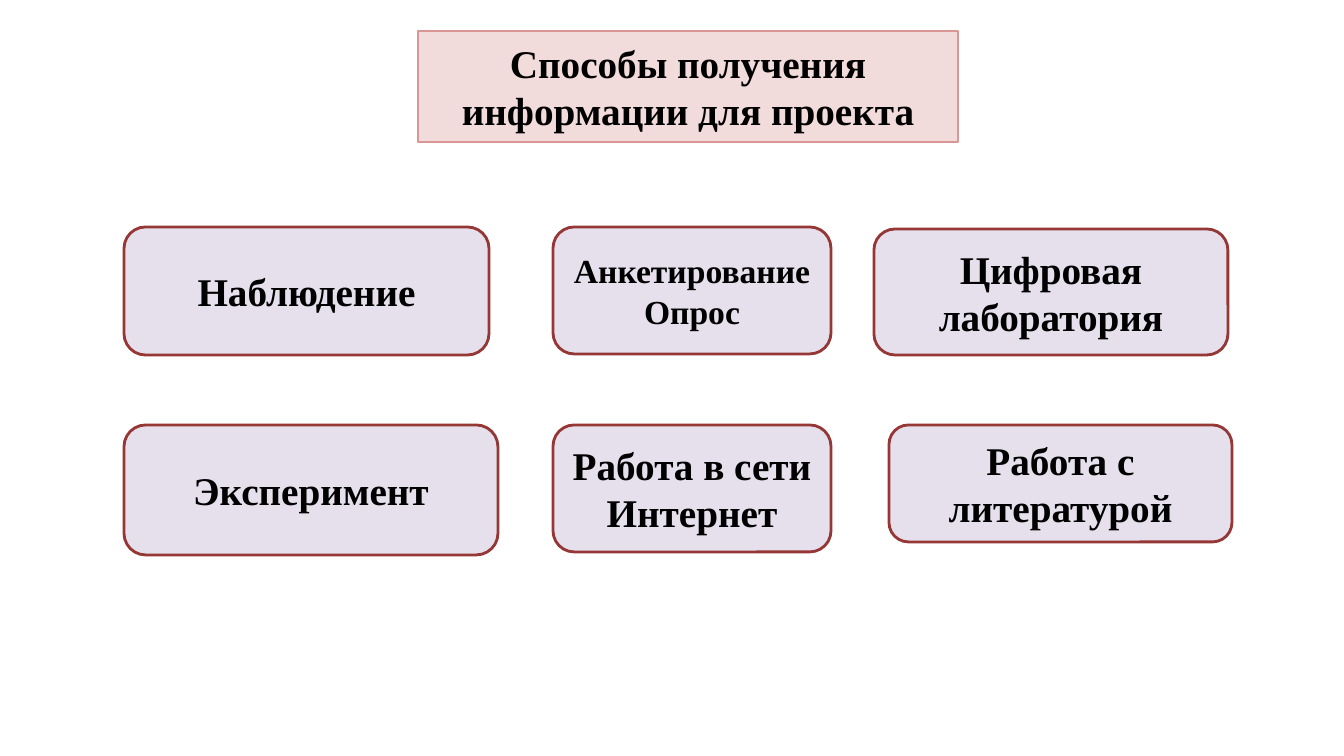
from pptx import Presentation
from pptx import util as u
from pptx.dml.color import RGBColor
from pptx.enum import shapes, text
from pptx.oxml import parse_xml
from pptx.oxml.ns import nsdecls

COLORS = {
    "title_fill": "F2DCDB",
    "title_line": "D99694",
    "card_fill": "E6E0EC",
    "card_line": "953735",
    "text": "000000",
}
EMU_PER_PX = 914400 / 100.8
SLIDE_SIZE = (1344, 756)

# left, top, width, height, wording, text size
METHODS = [
    (124, 227, 365, 128, "Наблюдение", 28),
    (553, 227, 278, 127, "Анкетирование Опрос", 24),
    (874, 229, 354, 126, "Цифровая лаборатория", 28),
    (124, 425, 374, 130, "Эксперимент", 28),
    (553, 425, 278, 127, "Работа в сети Интернет", 28),
    (889, 425, 343, 117, "Работа с литературой", 28),
]


def px(value):
    return u.Emu(round(value * EMU_PER_PX))


def color(name):
    return RGBColor.from_string(COLORS[name])


class SlideBuilder:
    font = "Times New Roman"
    line_width = u.Pt(2)

    def __init__(self, slide):
        self.slide = slide

    def format_box(self, shape, role, wording, size):
        shape.fill.solid()
        shape.fill.fore_color.rgb = color(role + "_fill")
        shape.line.color.rgb = color(role + "_line")
        shape.line.width = self.line_width
        frame = shape.text_frame
        frame.word_wrap = True
        frame.auto_size = text.MSO_AUTO_SIZE.NONE
        frame.vertical_anchor = text.MSO_ANCHOR.MIDDLE
        paragraph = frame.paragraphs[0]
        paragraph.alignment = text.PP_ALIGN.CENTER
        run = paragraph.add_run()
        run.text = wording
        run.font.name = self.font
        run.font.size = u.Pt(size)
        run.font.bold = True
        run.font.color.rgb = color("text")

    def title(self, left, top, width, height, wording, size):
        shape = self.slide.shapes.title
        shape.left, shape.top = px(left), px(top)
        shape.width, shape.height = px(width), px(height)
        # Give the placeholder rounded corners
        shape.element.spPr.append(parse_xml(
            f'<a:prstGeom {nsdecls("a")} prst="roundRect"><a:avLst/></a:prstGeom>'))
        self.format_box(shape, "title", wording, size)

    def card(self, left, top, width, height, wording, size):
        shape = self.slide.shapes.add_shape(
            shapes.MSO_SHAPE.ROUNDED_RECTANGLE,
            px(left), px(top), px(width), px(height))
        shape.shadow.inherit = False
        self.format_box(shape, "card", wording, size)


def main():
    presentation = Presentation()
    presentation.slide_width, presentation.slide_height = map(px, SLIDE_SIZE)
    title_only = presentation.slide_layouts[5]
    builder = SlideBuilder(presentation.slides.add_slide(title_only))

    # Heading
    builder.title(418, 31, 540, 111, "Способы получения информации для проекта", 28)

    # Ways of gathering information
    for method in METHODS:
        builder.card(*method)

    presentation.save("out.pptx")


if __name__ == "__main__":
    main()
